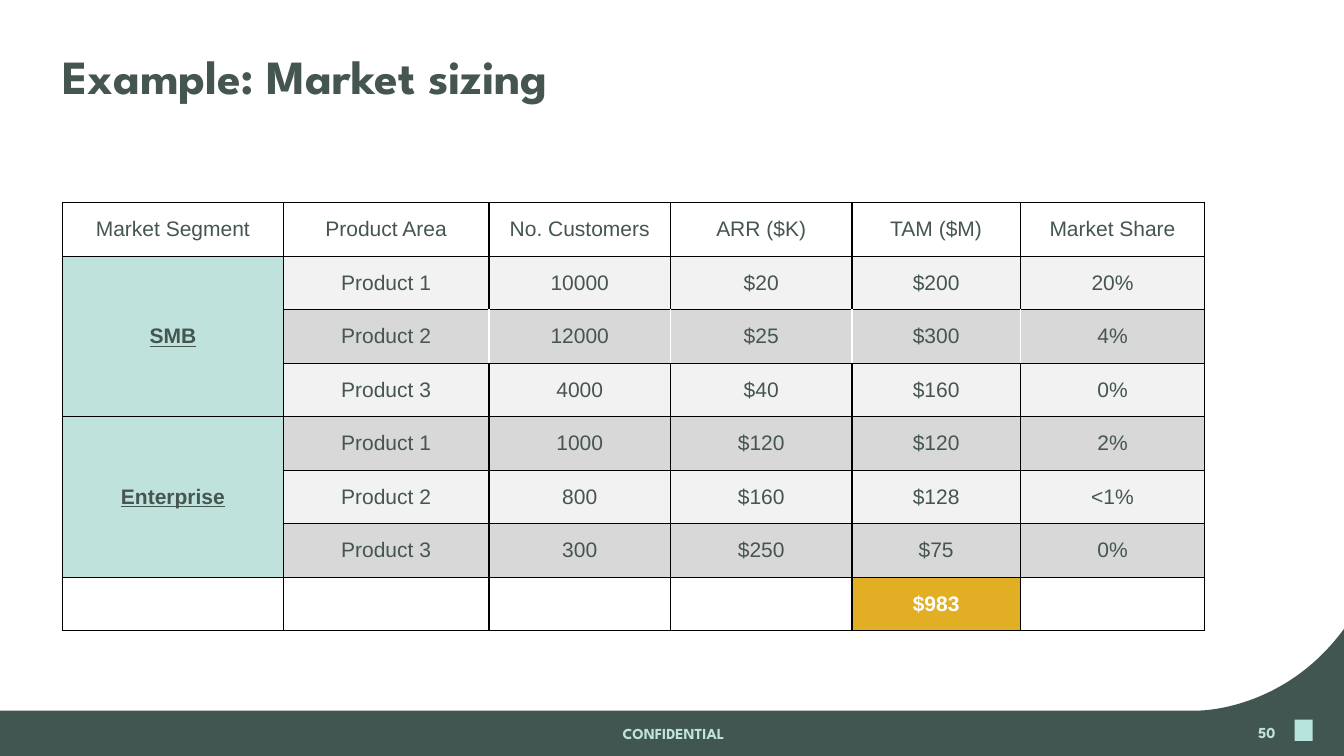
from pptx import Presentation
from pptx.dml.color import RGBColor
from pptx.enum.shapes import MSO_SHAPE as Shape
from pptx.enum.text import MSO_ANCHOR as Anchor, PP_ALIGN as Align
from pptx.oxml import parse_xml
from pptx.oxml.ns import nsdecls
from pptx.util import Inches, Pt

GRID_UNIT = Inches(1)
SLIDE_WIDTH, SLIDE_HEIGHT = 13.33, 7.5
INK, GREEN, MINT, MARK = "455550", "415651", "BFE3DC", "B5E5DC"
LIGHT, DARK, WHITE, GOLD, BLACK = "F2F2F2", "D8D8D8", "FFFFFF", "E1AE24", "000000"
HEADING_FONT, TABLE_FONT = "League Spartan", "Arial"

COLUMN_WIDTHS = [2.19, 2.04, 1.8, 1.8, 1.67, 1.83]
TABLE_HEIGHT = 4.25
TOTAL_COLUMN = 4
WHITE_RULED_ROW = 2
HEADERS = ["Market Segment", "Product Area", "No. Customers",
           "ARR ($K)", "TAM ($M)", "Market Share"]
SEGMENTS = {
    "SMB": [
        ["Product 1", "10000", "$20", "$200", "20%"],
        ["Product 2", "12000", "$25", "$300", "4%"],
        ["Product 3", "4000", "$40", "$160", "0%"],
    ],
    "Enterprise": [
        ["Product 1", "1000", "$120", "$120", "2%"],
        ["Product 2", "800", "$160", "$128", "<1%"],
        ["Product 3", "300", "$250", "$75", "0%"],
    ],
}
TOTAL = "$983"


def grid(*units):
    return [round(unit * GRID_UNIT) for unit in units]


def color(hex_code):
    return RGBColor.from_string(hex_code)


def paint(shape, hex_code):
    shape.fill.solid()
    shape.fill.fore_color.rgb = color(hex_code)
    shape.line.fill.background()
    shape.shadow.inherit = False


def style(paragraph, font_name, size, hex_code, bold=False, underline=False):
    font = paragraph.font
    font.name, font.size = font_name, Pt(size)
    font.bold, font.underline = bold, underline
    font.color.rgb = color(hex_code)


def set_margins(holder, left=0.06):
    holder.margin_left, holder.margin_right = grid(left, 0.06)
    holder.margin_top = holder.margin_bottom = Inches(0.03)


def add_label(slide, place, text, size, hex_code, align, left_margin=0.06):
    frame = slide.shapes.add_textbox(*grid(*place)).text_frame
    frame.word_wrap = True
    frame.vertical_anchor = Anchor.MIDDLE
    set_margins(frame, left_margin)
    label = frame.paragraphs[0]
    label.text, label.alignment = text, align
    style(label, HEADING_FONT, size, hex_code, bold=True)
    return label


def curve_points(start, pull_start, pull_end, end, steps=40):
    for step in range(1, steps + 1):
        t = step / steps
        yield tuple(
            (1 - t) ** 3 * a + 3 * (1 - t) ** 2 * t * b
            + 3 * (1 - t) * t ** 2 * c + t ** 3 * d
            for a, b, c, d in zip(start, pull_start, pull_end, end))


def add_footer_band(slide):
    band_top = 7.05
    bend = (11.88, band_top)
    sweep = curve_points(bend, bend, (12.73, 7.06), (SLIDE_WIDTH, 6.24))
    outline = [(0, SLIDE_HEIGHT), (0, band_top), bend, *sweep]
    builder = slide.shapes.build_freeform(*grid(SLIDE_WIDTH, SLIDE_HEIGHT))
    builder.add_line_segments([grid(*point) for point in outline])
    paint(builder.convert_to_shape(), GREEN)


def add_corner_mark(slide):
    mark = slide.shapes.add_shape(Shape.RECTANGLE, *grid(12.84, 7.14, 0.18, 0.21))
    paint(mark, MARK)


def rule_cell(cell, side_colors):
    properties = cell._tc.get_or_add_tcPr()
    for side, hex_code in side_colors.items():
        properties.append(parse_xml(
            f'<a:ln{side} {nsdecls("a")} w="{Pt(1)}"><a:solidFill>'
            f'<a:srgbClr val="{hex_code}"/></a:solidFill></a:ln{side}>'))


def fill_cell(cell, text, background, ink=INK, bold=False, underline=False):
    cell.fill.solid()
    cell.fill.fore_color.rgb = color(background)
    cell.vertical_anchor = Anchor.MIDDLE
    set_margins(cell)
    entry = cell.text_frame.paragraphs[0]
    entry.text, entry.alignment = text, Align.CENTER
    style(entry, TABLE_FONT, 15, ink, bold, underline)


def rule_table(table, row_count):
    last_column = len(HEADERS) - 1
    for row in range(row_count):
        for column in range(len(HEADERS)):
            white_ruled = row == WHITE_RULED_ROW
            rule_cell(table.cell(row, column), {
                "L": WHITE if white_ruled and column > 1 else BLACK,
                "R": WHITE if white_ruled and 0 < column < last_column else BLACK,
                "T": BLACK,
                "B": BLACK,
            })


def add_market_table(slide):
    row_count = sum(map(len, SEGMENTS.values())) + 2
    table = slide.shapes.add_table(
        row_count, len(HEADERS),
        *grid(0.62, 2.01, sum(COLUMN_WIDTHS), TABLE_HEIGHT)).table
    table.first_row = table.horz_banding = False
    for column, width in zip(table.columns, grid(*COLUMN_WIDTHS)):
        column.width = width
    rule_table(table, row_count)

    for column, header in enumerate(HEADERS):
        fill_cell(table.cell(0, column), header, WHITE)
    row = 1
    for segment, products in SEGMENTS.items():
        segment_cell = table.cell(row, 0)
        segment_cell.merge(table.cell(row + len(products) - 1, 0))
        fill_cell(segment_cell, segment, MINT, bold=True, underline=True)
        for product in products:
            for column, value in enumerate(product, start=1):
                fill_cell(table.cell(row, column), value, LIGHT if row % 2 else DARK)
            row += 1
    for column in range(len(HEADERS)):
        if column == TOTAL_COLUMN:
            fill_cell(table.cell(row, column), TOTAL, GOLD, WHITE, bold=True)
        else:
            fill_cell(table.cell(row, column), "", WHITE)


def main():
    deck = Presentation()
    deck.slide_width, deck.slide_height = grid(SLIDE_WIDTH, SLIDE_HEIGHT)
    slide = deck.slides.add_slide(deck.slide_layouts[6])
    add_footer_band(slide)
    add_corner_mark(slide)
    add_market_table(slide)
    add_label(slide, (4.43, 7.08, 4.5, 0.4), "CONFIDENTIAL", 10.9, MINT, Align.CENTER)
    add_label(slide, (9.71, 7.07, 3, 0.4), "50", 10.9, MINT, Align.RIGHT)
    title = add_label(slide, (0.62, 0.5, 11.8, 0.57), "Example: Market sizing",
                      34, INK, Align.LEFT, left_margin=0)
    title.line_spacing = 0.9
    deck.save("out.pptx")


if __name__ == "__main__":
    main()
